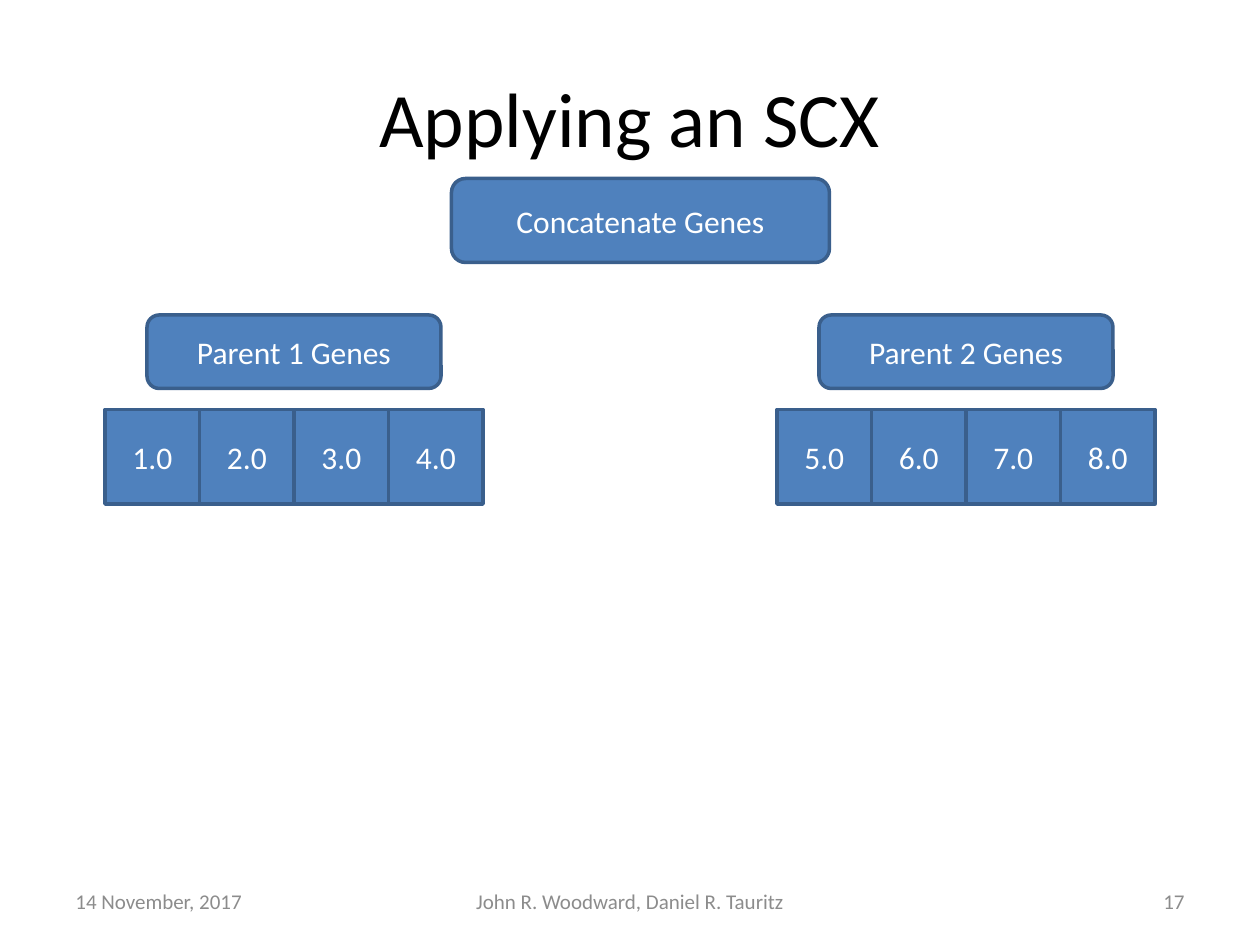
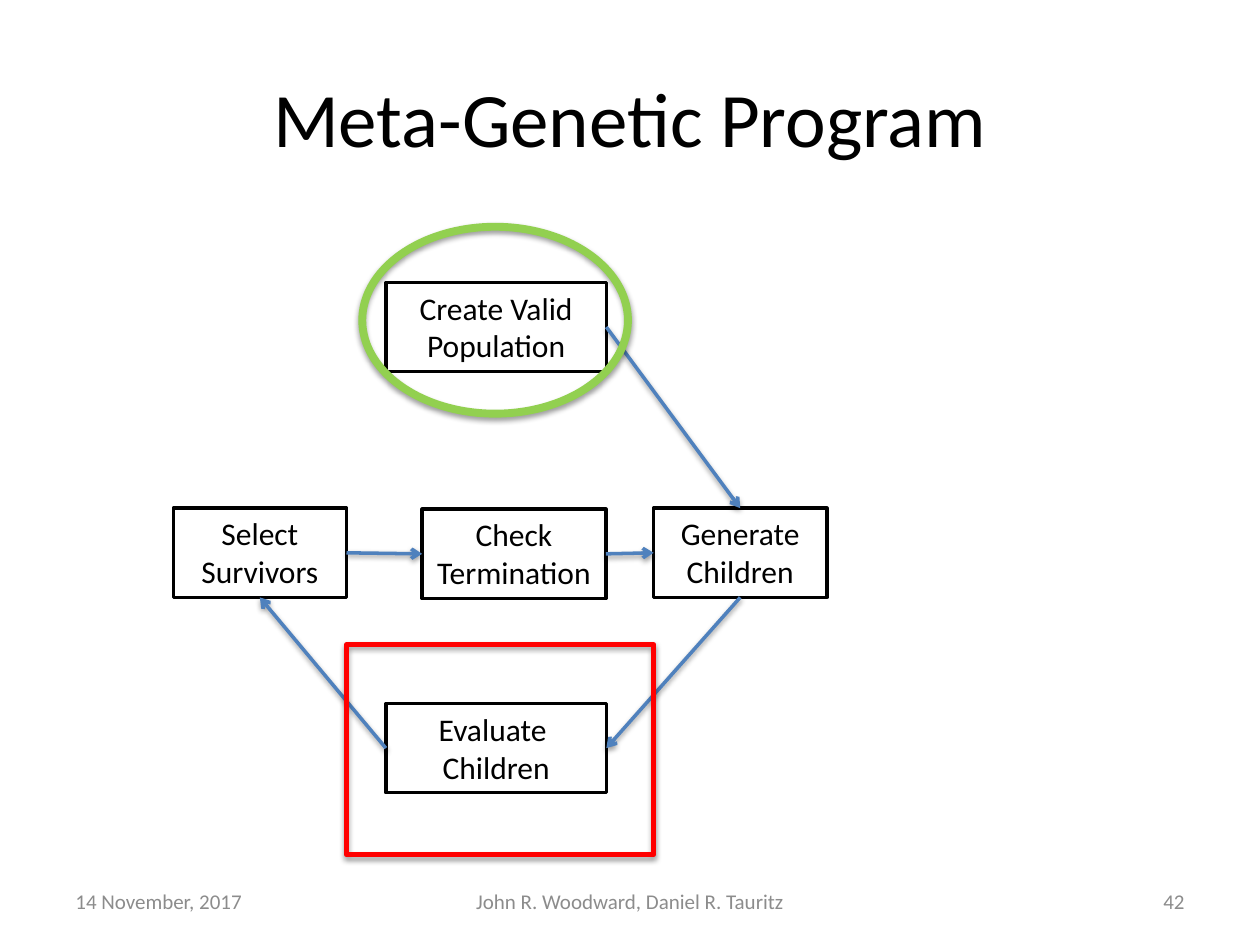
"""Two slides on genetic programming: gene concatenation and the meta-genetic loop."""
from lxml import etree
from pptx import Presentation
from pptx.dml.color import RGBColor
from pptx.enum.shapes import MSO_CONNECTOR, MSO_SHAPE
from pptx.enum.text import MSO_ANCHOR, PP_ALIGN
from pptx.oxml.ns import qn
from pptx.util import Inches, Pt

RECT, ROUND, OVAL = MSO_SHAPE.RECTANGLE, MSO_SHAPE.ROUNDED_RECTANGLE, MSO_SHAPE.OVAL
STRAIGHT = MSO_CONNECTOR.STRAIGHT
LEFT, CENTER, RIGHT = PP_ALIGN.LEFT, PP_ALIGN.CENTER, PP_ALIGN.RIGHT
TOP, MIDDLE = MSO_ANCHOR.TOP, MSO_ANCHOR.MIDDLE

COLS, ROWS = 120, 90
UNIT = Inches(10) / COLS
FONT = "Calibri"
BLUE, DARK_BLUE, WHITE, BLACK = "4F81BD", "3A5F8C", "FFFFFF", "000000"
GREY, RED, GREEN = "8C8C8C", "FF0000", "92D050"
SITES = {"top": 0, "left": 1, "bottom": 2, "right": 3}

TITLE_AT = (6, 3.6, 108, 15)
FOOTER_TOP, FOOTER_HEIGHT = 83.4, 4.8
CELL, CELL_TOP = 9, 39
STEP_HEIGHT = 8.5
STEPS = {
    "Create Valid Population": (36.75, 26.9, 21),
    "Generate Children": (62.25, 48.4, 16.5),
    "Evaluate \nChildren": (36.75, 67, 21),
    "Select Survivors": (16.5, 48.4, 16.5),
    "Check\nTermination": (40.2, 48.5, 17.5),
}
FLOW = [
    ("Create Valid Population", "right", "Generate Children", "top"),
    ("Generate Children", "bottom", "Evaluate \nChildren", "right"),
    ("Evaluate \nChildren", "left", "Select Survivors", "bottom"),
    ("Select Survivors", "right", "Check\nTermination", "left"),
    ("Check\nTermination", "right", "Generate Children", "left"),
]


def rgb(value):
    """Turn a hex string into a colour."""
    return RGBColor.from_string(value)


def grid(*cells):
    """Turn grid units into slide lengths."""
    return [round(c * UNIT) for c in cells]


def write(sp, text, size=18, color=BLACK, align=CENTER, anchor=MIDDLE):
    """Write one paragraph per line of text into a shape."""
    tf = sp.text_frame
    tf.text = text
    tf.word_wrap = True
    tf.vertical_anchor = anchor
    for p in tf.paragraphs:
        p.alignment = align
        for r in p.runs:
            for name, value in {"size": Pt(size), "name": FONT}.items():
                setattr(r.font, name, value)
            r.font.color.rgb = rgb(color)


def add_text(slide, at, text, **style):
    """Add a text box on the grid."""
    write(slide.shapes.add_textbox(*grid(*at)), text, **style)


def set_line(line, color, width):
    """Colour a line and set its width."""
    line.color.rgb = rgb(color)
    line.width = Pt(width)


def add_box(slide, kind, at, fill, line, width=2):
    """Add an outlined shape, hollow when it has no fill."""
    sp = slide.shapes.add_shape(kind, *grid(*at))
    if fill:
        sp.fill.solid()
        sp.fill.fore_color.rgb = rgb(fill)
    else:
        sp.fill.background()
    set_line(sp.line, line, width)
    sp.shadow.inherit = False
    return sp


def cast_shadow(effects):
    """Put a soft downward shadow into an effect list."""
    shadow = etree.SubElement(effects, qn("a:outerShdw"), blurRad=str(Pt(3.1)),
                              dist=str(Pt(1.6)), dir="5400000", rotWithShape="0")
    color = etree.SubElement(shadow, qn("a:srgbClr"), val=BLACK)
    etree.SubElement(color, qn("a:alpha"), val="38000")


def add_blue_box(slide, kind, at, text):
    """Add a blue box with a white label."""
    write(add_box(slide, kind, at, BLUE, DARK_BLUE), text, color=WHITE)


def add_genes(slide, left, parent, first):
    """Add a parent's label above its row of four genes."""
    add_blue_box(slide, ROUND, (left + 4, 30, 28, 7), f"Parent {parent} Genes")
    for i in range(4):
        add_blue_box(slide, RECT, (left + i * CELL, CELL_TOP, CELL, CELL), f"{first + i}.0")


def add_step(slide, text, left, top, width):
    """Add a white process step."""
    sp = add_box(slide, RECT, (left, top, width, STEP_HEIGHT), WHITE, BLACK)
    write(sp, text, anchor=TOP)
    return sp


def add_arrow(slide, start, start_side, end, end_side):
    """Join the sides of two steps with an arrow."""
    sp = slide.shapes.add_connector(STRAIGHT, 0, 0, 0, 0)
    sp.begin_connect(start, SITES[start_side])
    sp.end_connect(end, SITES[end_side])
    set_line(sp.line, BLUE, 2)
    etree.SubElement(sp.line._get_or_add_ln(), qn("a:tailEnd"), type="arrow")
    cast_shadow(etree.SubElement(sp._element.spPr, qn("a:effectLst")))


def add_ring(slide, kind, at, color, width):
    """Add a hollow highlight with a shadow."""
    sp = add_box(slide, kind, at, None, color, width)
    cast_shadow(sp._element.spPr.find(qn("a:effectLst")))


def add_slide(prs, title, number):
    """Add a blank slide with the shared title and footer."""
    slide = prs.slides.add_slide(prs.slide_layouts[6])
    add_text(slide, TITLE_AT, title, size=44)
    for left, width, text, align in [
        (6, 28, "14 November, 2017", LEFT),
        (41, 38, "John R. Woodward, Daniel R. Tauritz", CENTER),
        (86, 28, str(number), RIGHT),
    ]:
        add_text(slide, (left, FOOTER_TOP, width, FOOTER_HEIGHT), text,
                 size=12, color=GREY, align=align)
    return slide


def build_crossover(prs):
    """Show the genes of both parents about to be concatenated."""
    slide = add_slide(prs, "Applying an SCX", 17)
    add_genes(slide, 10, 1, 1)
    add_genes(slide, 74, 2, 5)
    add_blue_box(slide, ROUND, (43, 17, 36, 8), "Concatenate Genes")


def build_loop(prs):
    """Show the evolutionary loop with two highlighted steps."""
    slide = add_slide(prs, "Meta-Genetic Program", 42)
    steps = {text: add_step(slide, text, *at) for text, at in STEPS.items()}
    for start, start_side, end, end_side in FLOW:
        add_arrow(slide, steps[start], start_side, steps[end], end_side)
    add_ring(slide, RECT, (33, 61.4, 29.25, 20), RED, 3)
    add_ring(slide, OVAL, (34.5, 21.6, 25.3, 17.8), GREEN, 4.5)


def main():
    """Build and save the slides."""
    prs = Presentation()
    prs.slide_width, prs.slide_height = grid(COLS, ROWS)
    build_crossover(prs)
    build_loop(prs)
    prs.save("out.pptx")


if __name__ == "__main__":
    main()
